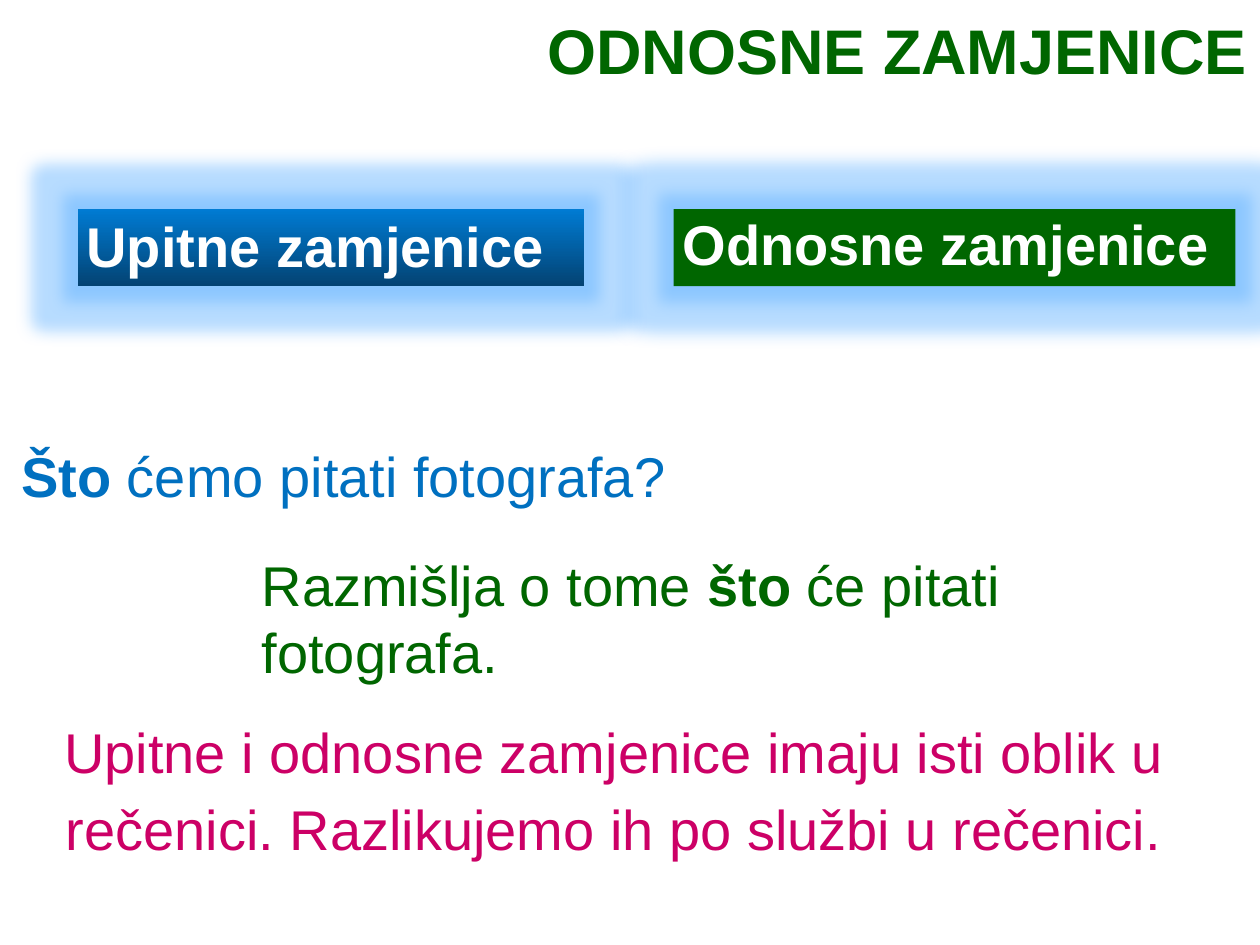
from lxml import etree
from pptx import Presentation
from pptx import util as u
from pptx.dml import color
from pptx.enum import shapes, text
from pptx.oxml import ns

GREEN = "006600"
BLUE = "0070C0"
PINK = "CC0066"
WHITE = "FFFFFF"
GLOW = "4DA8FF"


def rgb(value):
    return color.RGBColor.from_string(value)


def place(sp, left, top, width, height):
    sp.left, sp.top = u.Pt(left), u.Pt(top)
    sp.width, sp.height = u.Pt(width), u.Pt(height)


def add_run(p, words, hex_color, size=32, bold=False):
    r = p.add_run()
    r.text = words
    r.font.name = "Arial"
    r.font.size = u.Pt(size)
    r.font.bold = bold
    r.font.color.rgb = rgb(hex_color)


def add_glow(sp, radius):
    sp.shadow.inherit = False
    effects = sp._element.spPr.find(ns.qn("a:effectLst"))
    glow = etree.SubElement(effects, ns.qn("a:glow"), rad=str(u.Pt(radius)))
    tint = etree.SubElement(glow, ns.qn("a:srgbClr"), val=GLOW)
    etree.SubElement(tint, ns.qn("a:alpha"), val="40000")


def add_text(s, box, runs, hex_color):
    sp = s.shapes.add_textbox(*map(u.Pt, box))
    tf = sp.text_frame
    tf.word_wrap = True
    p = tf.paragraphs[0]
    for words, bold in runs:
        add_run(p, words, hex_color, bold=bold)
    return tf


def add_banner(s, left, width, fills, label, label_top):
    sp = s.shapes.add_shape(shapes.MSO_SHAPE.RECTANGLE,
                            *map(u.Pt, (left, 119.5, width, 44)))
    if len(fills) == 1:
        sp.fill.solid()
        sp.fill.fore_color.rgb = rgb(fills[0])
    else:
        sp.fill.gradient()
        sp.fill.gradient_angle = 270
        for stop, hex_color, position in zip(sp.fill.gradient_stops, fills, (0, 1)):
            stop.color.rgb = rgb(hex_color)
            stop.position = position
    sp.line.fill.background()
    add_glow(sp, 18)

    tf = add_text(s, (left, label_top, 321, 52.5), [(label, True)], WHITE)
    tf.vertical_anchor = text.MSO_ANCHOR.BOTTOM
    tf.margin_left = tf.margin_right = u.Pt(5)
    tf.margin_top = tf.margin_bottom = u.Pt(3)
    tf.paragraphs[0].space_before = u.Pt(10)


def set_title(s, words):
    sp = s.shapes.title
    place(sp, 160.5, -1, 559.5, 55)
    tf = sp.text_frame
    tf.word_wrap = True
    tf.auto_size = text.MSO_AUTO_SIZE.NONE
    tf.vertical_anchor = text.MSO_ANCHOR.BOTTOM
    p = tf.paragraphs[0]
    p.alignment = text.PP_ALIGN.RIGHT
    p.line_spacing = 0.9
    add_run(p, words, GREEN, size=36, bold=True)


def main():
    prs = Presentation()
    prs.slide_width, prs.slide_height = u.Pt(720), u.Pt(540)
    s = prs.slides.add_slide(prs.slide_layouts[5])
    set_title(s, "ODNOSNE ZAMJENICE")
    add_banner(s, 385, 321, [GREEN], "Odnosne zamjenice", 108.5)
    add_banner(s, 44.5, 289.5, ["007BD3", "034373"], "Upitne zamjenice", 110)
    add_text(s, (5, 249, 387.5, 46),
             [("Što ", True), ("ćemo pitati fotografa?", False)], BLUE)
    add_text(s, (142.5, 311, 573, 46),
             [("Razmišlja o tome ", False), ("što ", True),
              ("će pitati fotografa.", False)], GREEN)
    tf = add_text(s, (6, 400.5, 690, 96.5),
                  [("Upitne i odnosne zamjenice imaju isti oblik u rečenici. "
                    "Razlikujemo ih po službi u rečenici.", False)], PINK)
    p = tf.paragraphs[0]
    p.alignment = text.PP_ALIGN.CENTER
    p.line_spacing = 1.15
    prs.save("out.pptx")


if __name__ == "__main__":
    main()
